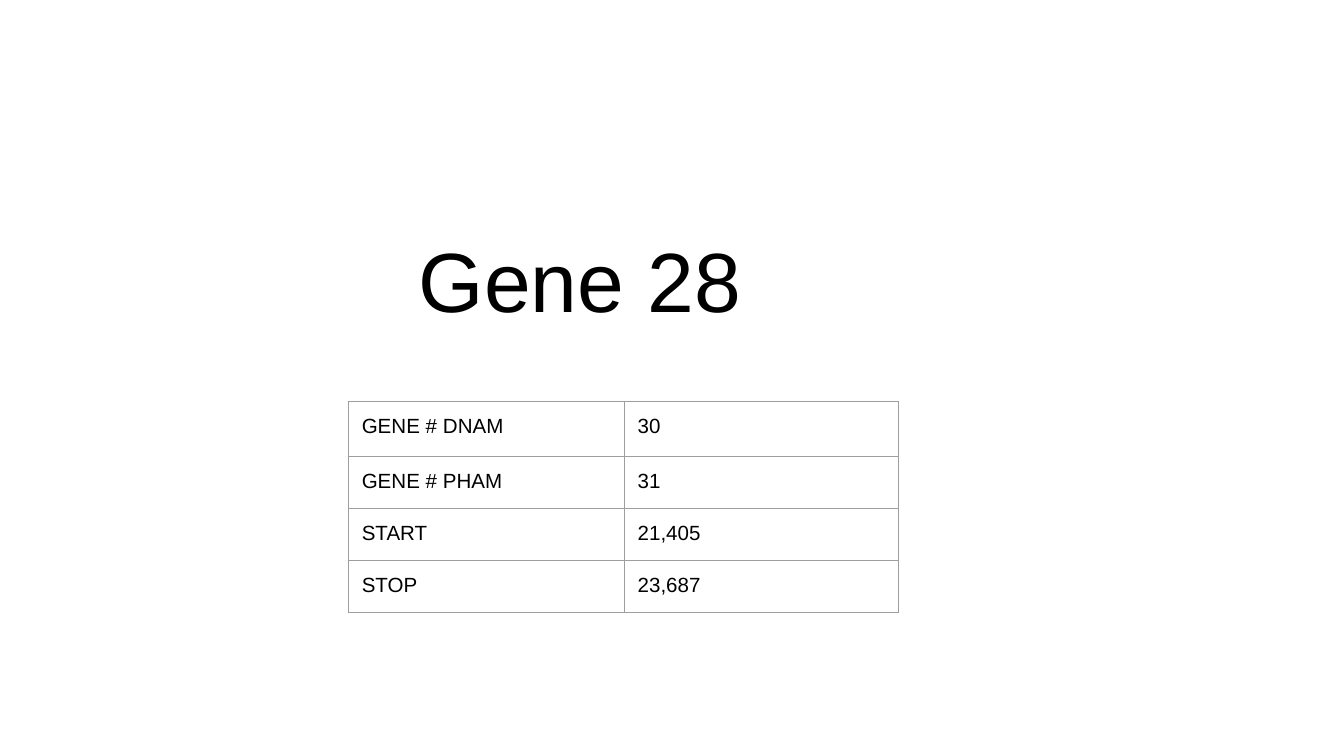
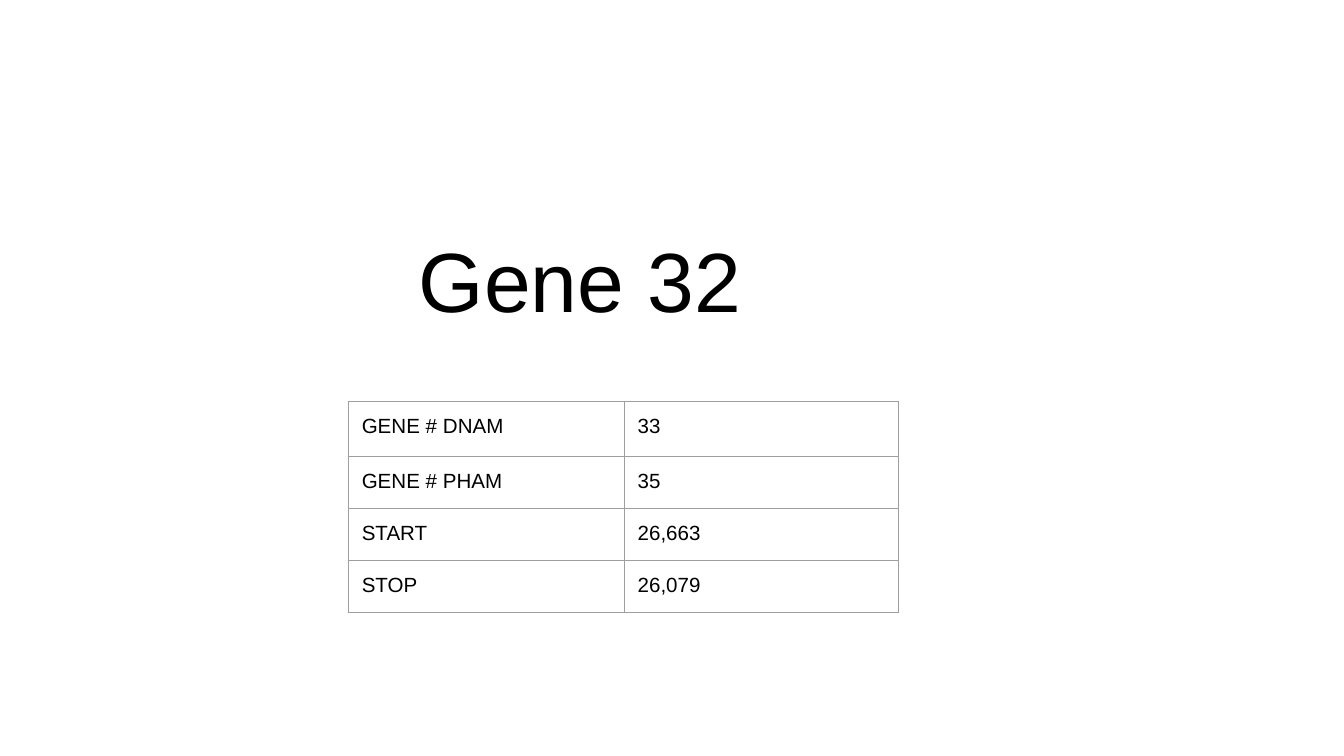
"""Build the gene slides, each with a title and a table of positions."""
from dataclasses import dataclass

from lxml import etree
from pptx import Presentation
from pptx.dml.color import RGBColor
from pptx.enum import text
from pptx.oxml import ns
from pptx.util import Pt

BLACK = RGBColor(0x00, 0x00, 0x00)
WHITE = RGBColor(0xFF, 0xFF, 0xFF)
GRID_GREY = RGBColor(0x9E, 0x9E, 0x9E)
FONT = "Arial"
INSET = Pt(7.2)
LABELS = ("GENE # DNAM", "GENE # PHAM", "START", "STOP")
COLUMN_WIDTHS = (Pt(147.8), Pt(146.8))
ROW_HEIGHTS = (Pt(29.5), Pt(27.9), Pt(27.9), Pt(27.9))


@dataclass(frozen=True)
class Gene:
    """A gene number and its values, in the order of LABELS."""

    number: int
    values: tuple[str, ...]


GENES = (
    Gene(28, ("30", "31", "21,405", "23,687")),
    Gene(32, ("33", "35", "26,663", "26,079")),
)


def write(frame, wording: str, size: float) -> None:
    """Put one black paragraph in a text frame."""
    frame.word_wrap = True
    paragraph = frame.paragraphs[0]
    paragraph.text = wording
    paragraph.font.name = FONT
    paragraph.font.size = Pt(size)
    paragraph.font.color.rgb = BLACK


def set_insets(holder, top=INSET) -> None:
    """Set the margins of a text frame or a table cell."""
    holder.margin_left = holder.margin_right = holder.margin_bottom = INSET
    holder.margin_top = top


def add_borders(cell) -> None:
    """Draw thin grey lines on all sides of a cell."""
    properties = cell._tc.get_or_add_tcPr()
    for position, side in enumerate(("lnL", "lnR", "lnT", "lnB")):
        line = etree.Element(ns.qn(f"a:{side}"), w=str(Pt(0.75)))
        fill = etree.SubElement(line, ns.qn("a:solidFill"))
        etree.SubElement(fill, ns.qn("a:srgbClr"), val=str(GRID_GREY))
        properties.insert(position, line)


def add_title(slide, wording: str) -> None:
    """Add the large gene title."""
    title = slide.shapes.add_textbox(Pt(217.4), Pt(110.9), Pt(285), Pt(87.8))
    frame = title.text_frame
    write(frame, wording, 45)
    set_insets(frame, top=Pt(11.5))
    frame.vertical_anchor = text.MSO_ANCHOR.TOP
    frame.paragraphs[0].alignment = text.PP_ALIGN.JUSTIFY


def add_gene_table(slide, gene: Gene) -> None:
    """Add the table of labels and values."""
    table = slide.shapes.add_table(
        len(LABELS), len(COLUMN_WIDTHS), Pt(186.6), Pt(215.1),
        sum(COLUMN_WIDTHS), sum(ROW_HEIGHTS),
    ).table
    table.first_row = table.horz_banding = False
    for column, width in zip(table.columns, COLUMN_WIDTHS):
        column.width = width
    for row, height, entries in zip(table.rows, ROW_HEIGHTS, zip(LABELS, gene.values)):
        row.height = height
        for cell, entry in zip(row.cells, entries):
            write(cell.text_frame, entry, 11)
            set_insets(cell)
            cell.fill.background()
            add_borders(cell)


def main() -> None:
    """Build and save the presentation."""
    presentation = Presentation()
    presentation.slide_width = Pt(720)
    presentation.slide_height = Pt(405)
    for gene in GENES:
        slide = presentation.slides.add_slide(presentation.slide_layouts[6])
        slide.background.fill.solid()
        slide.background.fill.fore_color.rgb = WHITE
        add_title(slide, f"Gene {gene.number}")
        add_gene_table(slide, gene)
    presentation.save("out.pptx")


if __name__ == "__main__":
    main()
